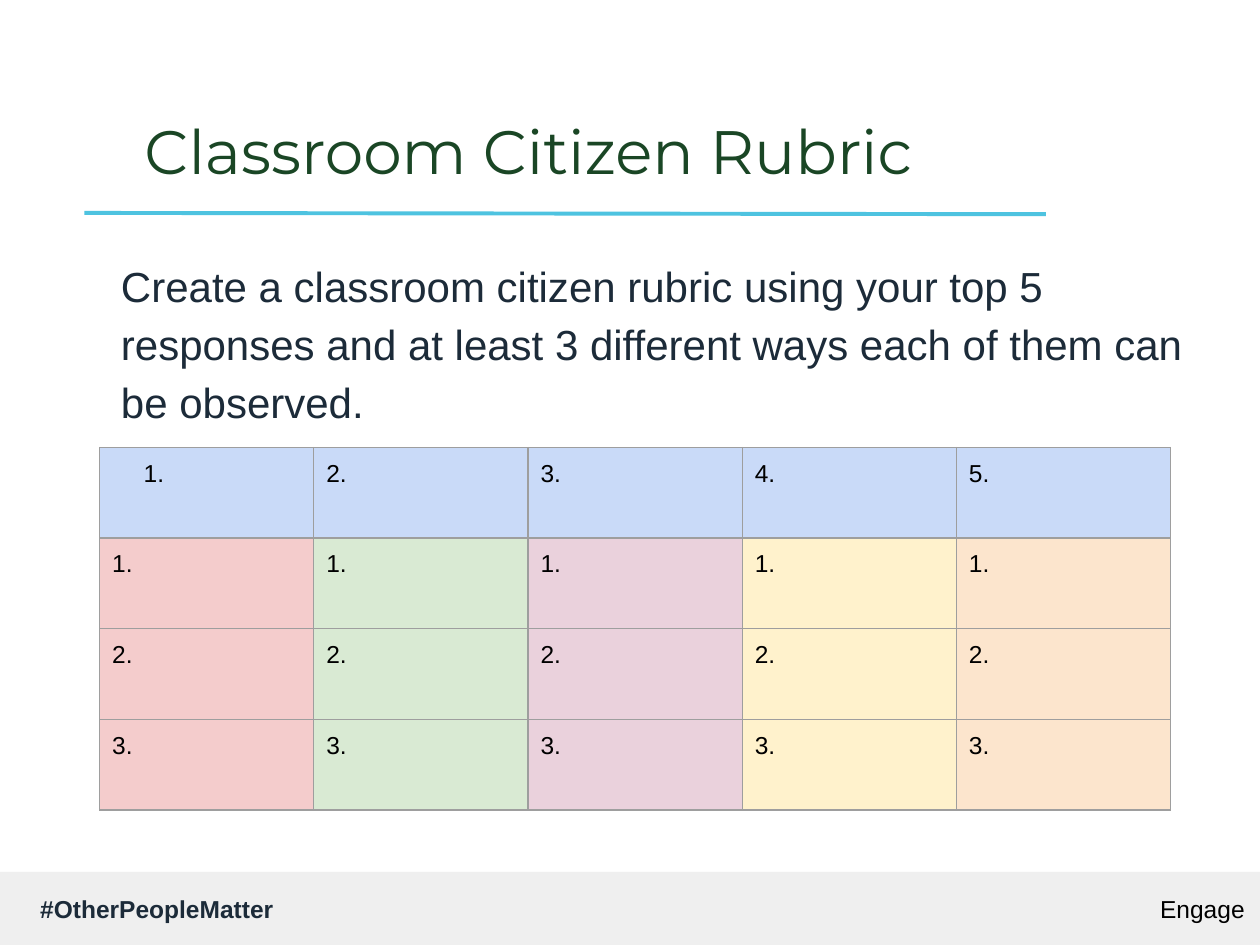
from lxml.etree import SubElement
from pptx import Presentation
from pptx.dml.color import RGBColor
from pptx.enum.shapes import MSO_CONNECTOR, MSO_SHAPE
from pptx.enum.text import MSO_ANCHOR, MSO_AUTO_SIZE, PP_ALIGN
from pptx.oxml.ns import qn
from pptx.util import Inches, Pt

NAVY, BLACK, GREEN = "1C2B39", "000000", "1A4625"
HEADER_FILL = "C9DAF8"
COLUMN_FILLS = ["F4CCCC", "D9EAD3", "EAD1DC", "FFF2CC", "FCE5CD"]
COL_WIDTH, ROW_HEIGHT = 1.7, 0.72
FOOTER_TOP, FOOTER_HEIGHT = 6.92, 0.58


def rgb(hex_color):
    return RGBColor.from_string(hex_color)


def box(*lengths):
    return [Inches(n) for n in lengths]


def write(tf, text, size, color, font="Arial", bold=False,
          align=PP_ALIGN.LEFT, anchor=MSO_ANCHOR.TOP, inset=0.1):
    """Fill a text frame with one formatted paragraph and return it."""
    tf.text = text
    tf.word_wrap = True
    tf.auto_size = MSO_AUTO_SIZE.NONE
    tf.vertical_anchor = anchor
    tf.margin_left = tf.margin_right = Inches(inset)
    tf.margin_top = tf.margin_bottom = Inches(inset)
    p = tf.paragraphs[0]
    p.alignment = align
    style_run(p.runs[0], size, color, font, bold)
    return p


def style_run(r, size, color, font="Arial", bold=False):
    r.font.size, r.font.name, r.font.bold = Pt(size), font, bold
    r.font.color.rgb = rgb(color)


def indent(p, left, first=0):
    pPr = p._p.get_or_add_pPr()
    pPr.set("marL", str(Inches(left)))
    pPr.set("indent", str(Inches(first)))
    return pPr


def place(s, left, top, width, height):
    s.left, s.top, s.width, s.height = box(left, top, width, height)


def add_title(slide, text):
    s = slide.shapes.title
    place(s, 0.63, 0.64, 7.13, 0.94)
    write(s.text_frame, text, 35, GREEN, "Montserrat",
          align=PP_ALIGN.CENTER, anchor=MSO_ANCHOR.BOTTOM)


def add_rule(slide):
    line = slide.shapes.add_connector(MSO_CONNECTOR.STRAIGHT, *box(0.67, 1.69, 8.3, 1.7))
    line.line.color.rgb = rgb("4EC3E0")
    line.line.width = Pt(2.25)
    SubElement(line._element.spPr, qn("a:effectLst"))


def add_instructions(slide, text):
    s = slide.placeholders[1]
    place(s, 0.67, 1.91, 9.03, 4.82)
    p = write(s.text_frame, text, 24, NAVY)
    p.line_spacing = 1.15
    p.space_before = Pt(0)
    SubElement(indent(p, 0.19), qn("a:buNone"))


def add_borders(cell):
    tcPr = cell._tc.get_or_add_tcPr()
    for side in ("lnL", "lnR", "lnT", "lnB"):
        ln = SubElement(tcPr, qn(f"a:{side}"), w=str(Pt(0.75)))
        fill = SubElement(ln, qn("a:solidFill"))
        SubElement(fill, qn("a:srgbClr"), val="9E9E9E")


def fill_cell(cell, text, color):
    add_borders(cell)
    cell.fill.solid()
    cell.fill.fore_color.rgb = rgb(color)
    cell.margin_left = cell.margin_right = Inches(0.1)
    cell.margin_top = cell.margin_bottom = Inches(0.1)
    cell.text = text
    style_run(cell.text_frame.paragraphs[0].runs[0], 14, BLACK)


def add_rubric(slide, rows=4):
    cols = len(COLUMN_FILLS)
    table = slide.shapes.add_table(
        rows, cols, *box(0.79, 3.55, cols * COL_WIDTH, rows * ROW_HEIGHT)).table
    for col, color in enumerate(COLUMN_FILLS):
        table.columns[col].width = Inches(COL_WIDTH)
        fill_cell(table.cell(0, col), f"{col + 1}.", HEADER_FILL)
        for row in range(1, rows):
            fill_cell(table.cell(row, col), f"{row}.", color)
    indent(table.cell(0, 0).text_frame.paragraphs[0], 0.35, -0.1)


def add_footer_bar(slide):
    bar = slide.shapes.add_shape(MSO_SHAPE.RECTANGLE,
                                 *box(0, FOOTER_TOP, 10, FOOTER_HEIGHT))
    bar.shadow.inherit = False
    bar.fill.solid()
    bar.fill.fore_color.rgb = rgb("EFEFEF")
    bar.line.fill.background()


def add_footer_text(slide, text, left, width, color, **style):
    s = slide.shapes.add_textbox(*box(left, FOOTER_TOP, width, FOOTER_HEIGHT))
    write(s.text_frame, text, 14, color, anchor=MSO_ANCHOR.MIDDLE, **style)


def main():
    prs = Presentation()
    prs.slide_width, prs.slide_height = box(10, 7.5)
    slide = prs.slides.add_slide(prs.slide_layouts[1])
    add_footer_bar(slide)
    add_rule(slide)
    add_footer_text(slide, "#OtherPeopleMatter", 0.22, 2.05, NAVY, bold=True)
    add_title(slide, "Classroom Citizen Rubric")
    add_instructions(slide, "Create a classroom citizen rubric using your top 5 responses "
                            "and at least 3 different ways each of them can be observed.")
    add_rubric(slide)
    add_footer_text(slide, "Engage", 8.65, 1.23, BLACK, align=PP_ALIGN.RIGHT, inset=0)
    prs.save("out.pptx")


if __name__ == "__main__":
    main()
